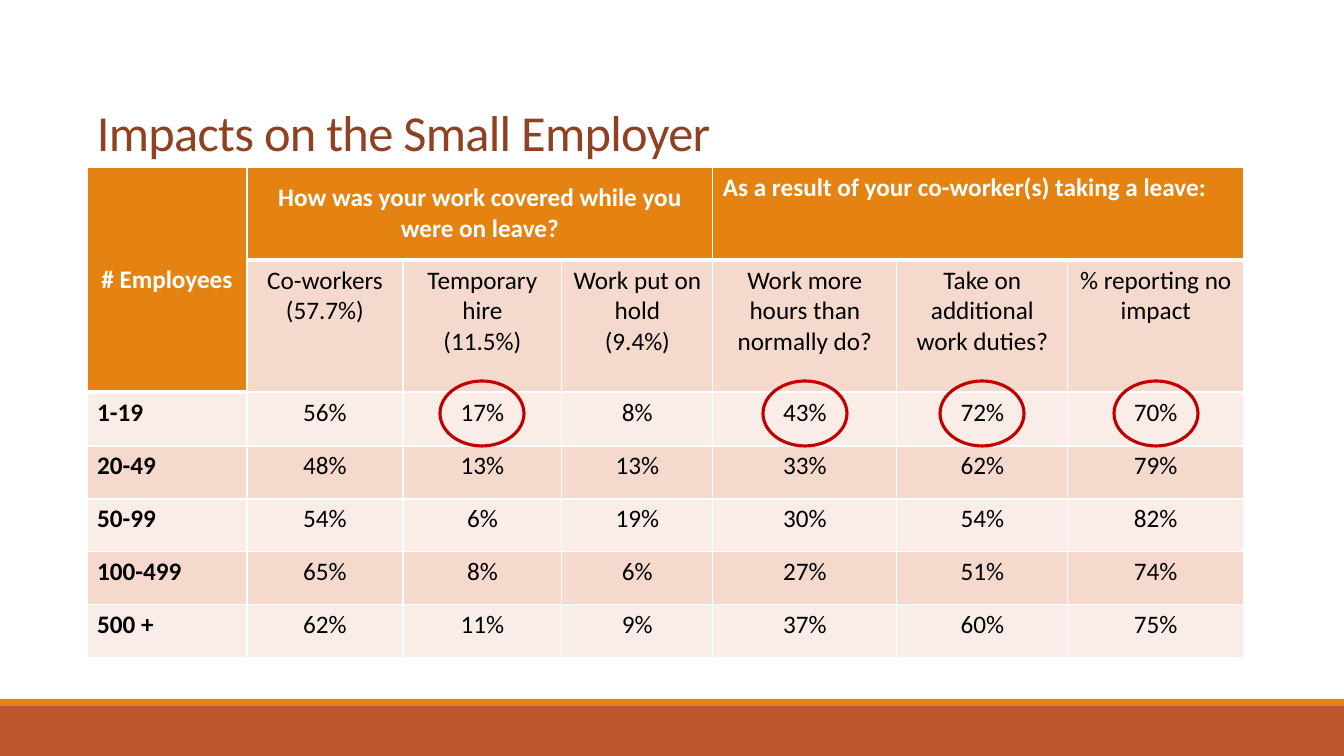
from lxml import etree
from pptx import Presentation
from pptx.dml.color import RGBColor
from pptx.enum.shapes import MSO_SHAPE
from pptx.enum.text import MSO_ANCHOR, PP_ALIGN
from pptx.oxml.ns import qn
from pptx.util import Pt

RECT, OVAL = MSO_SHAPE.RECTANGLE, MSO_SHAPE.OVAL
TOP, MIDDLE, BOTTOM = MSO_ANCHOR.TOP, MSO_ANCHOR.MIDDLE, MSO_ANCHOR.BOTTOM
LEFT, CENTER = PP_ALIGN.LEFT, PP_ALIGN.CENTER

WHITE = RGBColor(0xFF, 0xFF, 0xFF)
BLACK = RGBColor(0x00, 0x00, 0x00)
RUST = RGBColor(0xBD, 0x58, 0x2C)
ORANGE = RGBColor(0xE4, 0x83, 0x12)
BROWN = RGBColor(0x8E, 0x42, 0x21)
DARK_BAND = RGBColor(0xF5, 0xD9, 0xCC)
LIGHT_BAND = RGBColor(0xFA, 0xED, 0xE7)
RED = RGBColor(0xC0, 0x00, 0x00)

FONT = "Calibri"
SLIDE_W, SLIDE_H = 1344, 756
COL_WIDTHS = [160, 156, 159, 151, 184, 171, 176]
ROW_HEIGHTS = [93, 132, 54, 53, 53, 53, 53]
CIRCLED_ROW, CIRCLED_COLS = 2, (2, 4, 5, 6)

ROWS = [
    ["# Employees", "How was your work covered while you were on leave?", "", "",
     "As a result of your co-worker(s) taking a leave:", "", ""],
    ["", "Co-workers\n(57.7%)", "Temporary hire\n(11.5%)", "Work put on hold\n(9.4%)",
     "Work more hours than normally do?", "Take on additional work duties?",
     "% reporting no impact"],
    ["1-19", "56%", "17%", "8%", "43%", "72%", "70%"],
    ["20-49", "48%", "13%", "13%", "33%", "62%", "79%"],
    ["50-99", "54%", "6%", "19%", "30%", "54%", "82%"],
    ["100-499", "65%", "8%", "6%", "27%", "51%", "74%"],
    ["500 +", "62%", "11%", "9%", "37%", "60%", "75%"],
]


def px(n):
    return round(n * 914400 / 100.8)


def add_run(p, text, size, color, bold=False):
    r = p.add_run()
    r.text = text
    r.font.name, r.font.size, r.font.bold = FONT, Pt(size), bold
    r.font.color.rgb = color
    return r


def add_shape(s, kind, x, y, w, h):
    sp = s.shapes.add_shape(kind, px(x), px(y), px(w), px(h))
    sp.shadow.inherit = False
    return sp


def add_footer(s, x, y, w, h):
    # Thin accent strip above the wide band
    strip = 7
    for top, height, color in ((y + strip, h - strip, RUST), (y, strip, ORANGE)):
        sp = add_shape(s, RECT, x, top, w, height)
        sp.fill.solid()
        sp.fill.fore_color.rgb = color
        sp.line.fill.background()


def add_title(s, x, y, w, h):
    tf = s.shapes.add_textbox(px(x), px(y), px(w), px(h)).text_frame
    tf.word_wrap = True
    tf.vertical_anchor = BOTTOM
    p = tf.paragraphs[0]
    p.line_spacing = 0.85
    r = add_run(p, "Impacts on the Small Employer", 36, BROWN)
    r.font._element.set("spc", "-50")


def set_borders(cell, top, bottom):
    tcPr = cell._tc.get_or_add_tcPr()
    for side, width in (("L", 1), ("R", 1), ("T", top), ("B", bottom)):
        ln = etree.SubElement(tcPr, qn(f"a:ln{side}"), w=str(Pt(width)))
        fill = etree.SubElement(ln, qn("a:solidFill"))
        etree.SubElement(fill, qn("a:srgbClr"), val=str(WHITE))


def is_header(row, col):
    return row == 0 or (row == 1 and col == 0)


def fill_cell(cell, row, col, text):
    header = is_header(row, col)
    below_header = not header and is_header(row - 1, col)
    set_borders(cell, 3 if below_header else 1, 3 if header else 1)
    cell.fill.solid()
    cell.fill.fore_color.rgb = ORANGE if header else DARK_BAND if row % 2 else LIGHT_BAND
    if not text:
        return
    cell.vertical_anchor = MIDDLE if header and col < 4 else TOP
    left = (row > 1 and col == 0) or (row == 0 and col == 4)
    tf = cell.text_frame
    for i, line in enumerate(text.split("\n")):
        p = tf.add_paragraph() if i else tf.paragraphs[0]
        p.alignment = LEFT if left else CENTER
        add_run(p, line, 18, WHITE if header else BLACK, header or col == 0)


def add_survey_table(s, x, y):
    table = s.shapes.add_table(len(ROW_HEIGHTS), len(COL_WIDTHS), px(x), px(y),
                               px(sum(COL_WIDTHS)), px(sum(ROW_HEIGHTS))).table
    for column, width in zip(table.columns, COL_WIDTHS):
        column.width = px(width)
    for row, height in zip(table.rows, ROW_HEIGHTS):
        row.height = px(height)
    for i, texts in enumerate(ROWS):
        for j, text in enumerate(texts):
            fill_cell(table.cell(i, j), i, j, text)
    # Header spans
    for first, last in (((0, 0), (1, 0)), ((0, 1), (0, 3)), ((0, 4), (0, 6))):
        table.cell(*first).merge(table.cell(*last))


def add_circles(s, x, y):
    # Rings around key figures, placed from the table's top left corner
    w, h = 84, 65
    top = y + sum(ROW_HEIGHTS[:CIRCLED_ROW]) - 11
    for col in CIRCLED_COLS:
        center = x + sum(COL_WIDTHS[:col]) + COL_WIDTHS[col] / 2
        sp = add_shape(s, OVAL, round(center - w / 2), top, w, h)
        sp.fill.background()
        sp.line.color.rgb = RED
        sp.line.width = Pt(2.25)


def main():
    prs = Presentation()
    prs.slide_width, prs.slide_height = px(SLIDE_W), px(SLIDE_H)
    s = prs.slides.add_slide(prs.slide_layouts[6])
    add_footer(s, 0, 699, SLIDE_W, SLIDE_H - 699)
    add_title(s, 87, 41, 1109, 126)
    add_survey_table(s, 87, 167)
    add_circles(s, 87, 167)
    prs.save("out.pptx")


if __name__ == "__main__":
    main()
